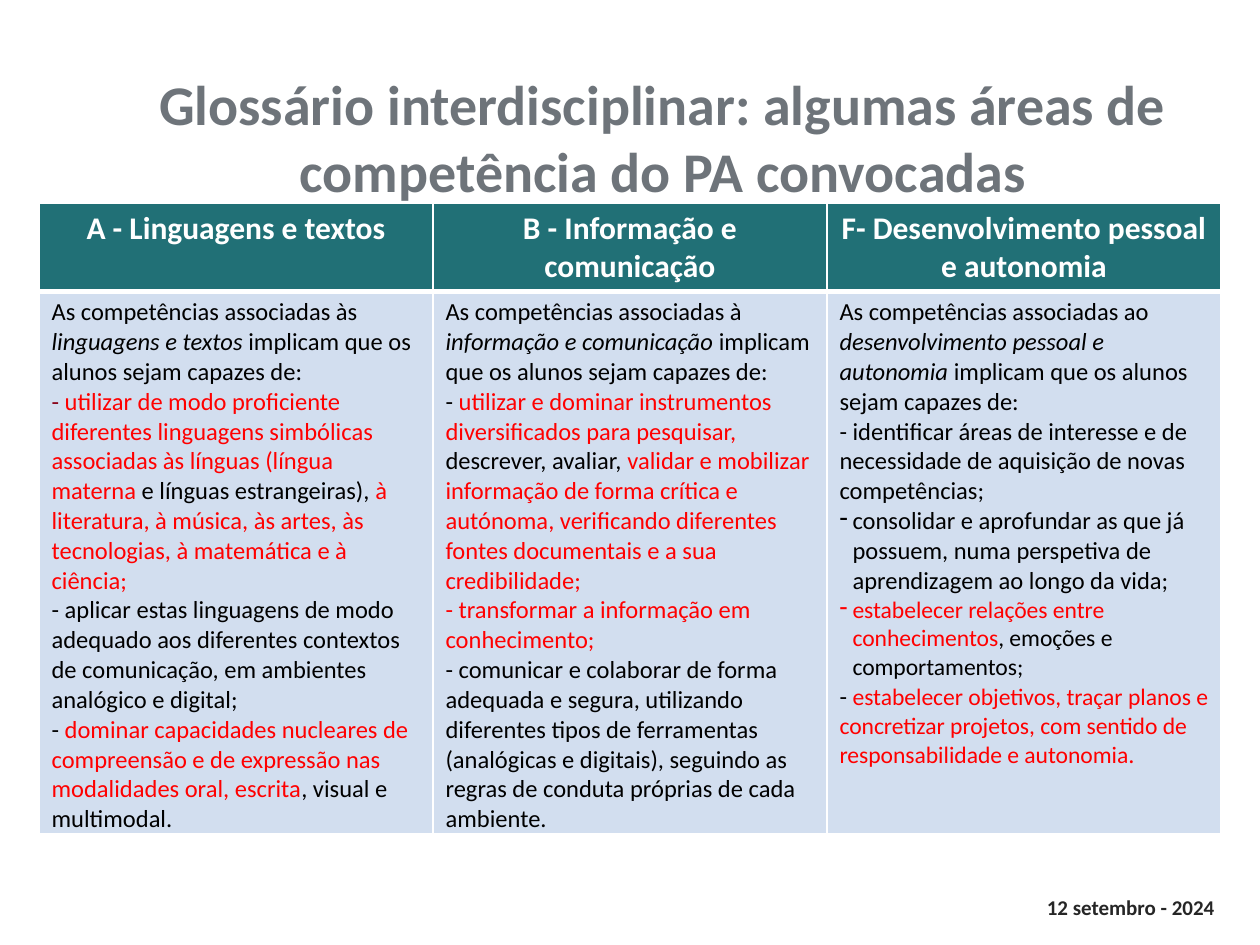
from lxml import etree
from pptx import Presentation
from pptx.dml.color import RGBColor
from pptx.enum.text import MSO_ANCHOR, PP_ALIGN
from pptx.oxml.ns import qn
from pptx.util import Pt

PX = 914400 / 126
FONT = "Calibri"
CENTER, RIGHT, LEFT = PP_ALIGN.CENTER, PP_ALIGN.RIGHT, PP_ALIGN.LEFT
MIDDLE = MSO_ANCHOR.MIDDLE
BLACK = RGBColor(0x00, 0x00, 0x00)
WHITE = RGBColor(0xFF, 0xFF, 0xFF)
RED = RGBColor(0xFF, 0x00, 0x00)
MAROON = RGBColor(0x88, 0x00, 0x16)
SLATE = RGBColor(0x6E, 0x74, 0x7A)
CHARCOAL = RGBColor(0x26, 0x26, 0x26)
TEAL = RGBColor(0x21, 0x70, 0x76)
PALE_BLUE = RGBColor(0xD2, 0xDE, 0xEF)

HEADINGS = [
    "A - Linguagens e textos",
    "B - Informação e comunicação",
    "F- Desenvolvimento pessoal e autonomia",
]
AREAS = [
    ("às ", "linguagens e textos "),
    ("à ", "informação e comunicação "),
    ("ao ", "desenvolvimento pessoal e autonomia "),
]
SKILLS = [
    [
        [("- ", MAROON),
         ("utilizar de modo proficiente diferentes linguagens simbólicas associadas às "
          "línguas (língua materna ", RED),
         ("e línguas estrangeiras), ", BLACK),
         ("à literatura, à música, às artes, às tecnologias, à matemática e à ciência;", RED)],
        [("- aplicar estas linguagens de modo adequado aos diferentes contextos de "
          "comunicação, em ambientes analógico e digital;", BLACK)],
        [("- ", BLACK),
         ("dominar capacidades nucleares de compreensão e de expressão nas modalidades "
          "oral, escrita", RED),
         (", visual e multimodal.", BLACK)],
    ],
    [
        [("- ", BLACK),
         ("utilizar e dominar instrumentos diversificados para pesquisar, ", RED),
         ("descrever, avaliar, ", BLACK),
         ("validar e mobilizar informação de forma crítica e autónoma, verificando "
          "diferentes fontes documentais e a sua credibilidade;", RED)],
        [("- transformar a informação em conhecimento;", RED)],
        [("- comunicar e colaborar de forma adequada e segura, utilizando diferentes "
          "tipos de ferramentas (analógicas e digitais), seguindo as regras de conduta "
          "próprias de cada ambiente.", BLACK)],
    ],
    [
        [("- identificar áreas de interesse e de necessidade de aquisição de novas "
          "competências;", BLACK)],
        [("consolidar e aprofundar as que já possuem, numa perspetiva de aprendizagem "
          "ao longo da vida;", BLACK)],
        [("estabelecer relações entre conhecimentos", RED, 13.5),
         (", emoções e comportamentos;", BLACK, 13.5)],
        [("- ", BLACK),
         ("estabelecer objetivos, traçar planos e concretizar projetos, com sentido de "
          "responsabilidade e autonomia", RED, 13.5),
         (".", RED)],
    ],
]


class GlossarySlide:
    """Draws the glossary elements on one slide in a shared style."""

    def __init__(self, slide):
        self.slide = slide

    def px(self, length):
        return round(length * PX)

    def style(self, run, size, color, bold=False, italic=False):
        font = run.font
        font.name, font.size, font.bold, font.italic = FONT, Pt(size), bold, italic
        font.color.rgb = color

    def label(self, text, box, size, color, align):
        frame = self.slide.shapes.add_textbox(*map(self.px, box)).text_frame
        frame.word_wrap = True
        frame.vertical_anchor = MIDDLE
        self.heading(frame, text, size, color, align)

    def heading(self, frame, text, size, color, align):
        frame.text = text
        paragraph = frame.paragraphs[0]
        paragraph.alignment = align
        self.style(paragraph.runs[0], size, color, bold=True)

    def dash_bullet(self, paragraph):
        properties = paragraph._p.get_or_add_pPr()
        properties.set("marL", str(self.px(13)))
        properties.set("indent", str(-self.px(13)))
        etree.SubElement(properties, qn("a:buChar")).set("char", "-")

    def paragraph(self, paragraph, parts):
        paragraph.alignment = LEFT
        for text, color, *size in parts:
            run = paragraph.add_run()
            run.text = text
            self.style(run, size[0] if size else 14, color)
        if not parts[0][0].startswith(("-", "As ")):
            self.dash_bullet(paragraph)

    def paint_cell(self, cell, fill, bottom_width):
        properties = cell._tc.get_or_add_tcPr()
        for side, width in (("L", 1), ("R", 1), ("T", 1), ("B", bottom_width)):
            line = etree.SubElement(properties, qn(f"a:ln{side}"), w=str(Pt(width)))
            solid = etree.SubElement(line, qn("a:solidFill"))
            etree.SubElement(solid, qn("a:srgbClr"), val=str(WHITE))
        cell.fill.solid()
        cell.fill.fore_color.rgb = fill

    def competences(self, frame, area, skills):
        article, name = area
        intro = [("As competências associadas " + article, BLACK), (name, BLACK),
                 ("implicam que os alunos sejam capazes de:", BLACK)]
        self.paragraph(frame.paragraphs[0], intro)
        frame.paragraphs[0].runs[1].font.italic = True
        for skill in skills:
            self.paragraph(frame.add_paragraph(), skill)

    def table(self, box, row_heights):
        table = self.slide.shapes.add_table(
            len(row_heights), len(HEADINGS), *map(self.px, box)).table
        for row, height in zip(table.rows, row_heights):
            row.height = self.px(height)
        for column, content in enumerate(zip(HEADINGS, AREAS, SKILLS)):
            heading, area, skills = content
            head, body = table.cell(0, column), table.cell(1, column)
            self.paint_cell(head, TEAL, 3)
            self.paint_cell(body, PALE_BLUE, 1)
            self.heading(head.text_frame, heading, 18, WHITE, CENTER)
            self.competences(body.text_frame, area, skills)


def main():
    deck = Presentation()
    deck.slide_width, deck.slide_height = round(1260 * PX), round(945 * PX)
    glossary = GlossarySlide(deck.slides.add_slide(deck.slide_layouts[6]))
    glossary.label("12 setembro - 2024", (999, 888, 228, 38), 12, CHARCOAL, RIGHT)
    glossary.label("Glossário interdisciplinar: algumas áreas de competência do PA convocadas",
                   (66, 100, 1194, 73), 32, SLATE, CENTER)
    glossary.table((39, 203, 1182, 630), (88, 542))
    deck.save("out.pptx")


if __name__ == "__main__":
    main()
